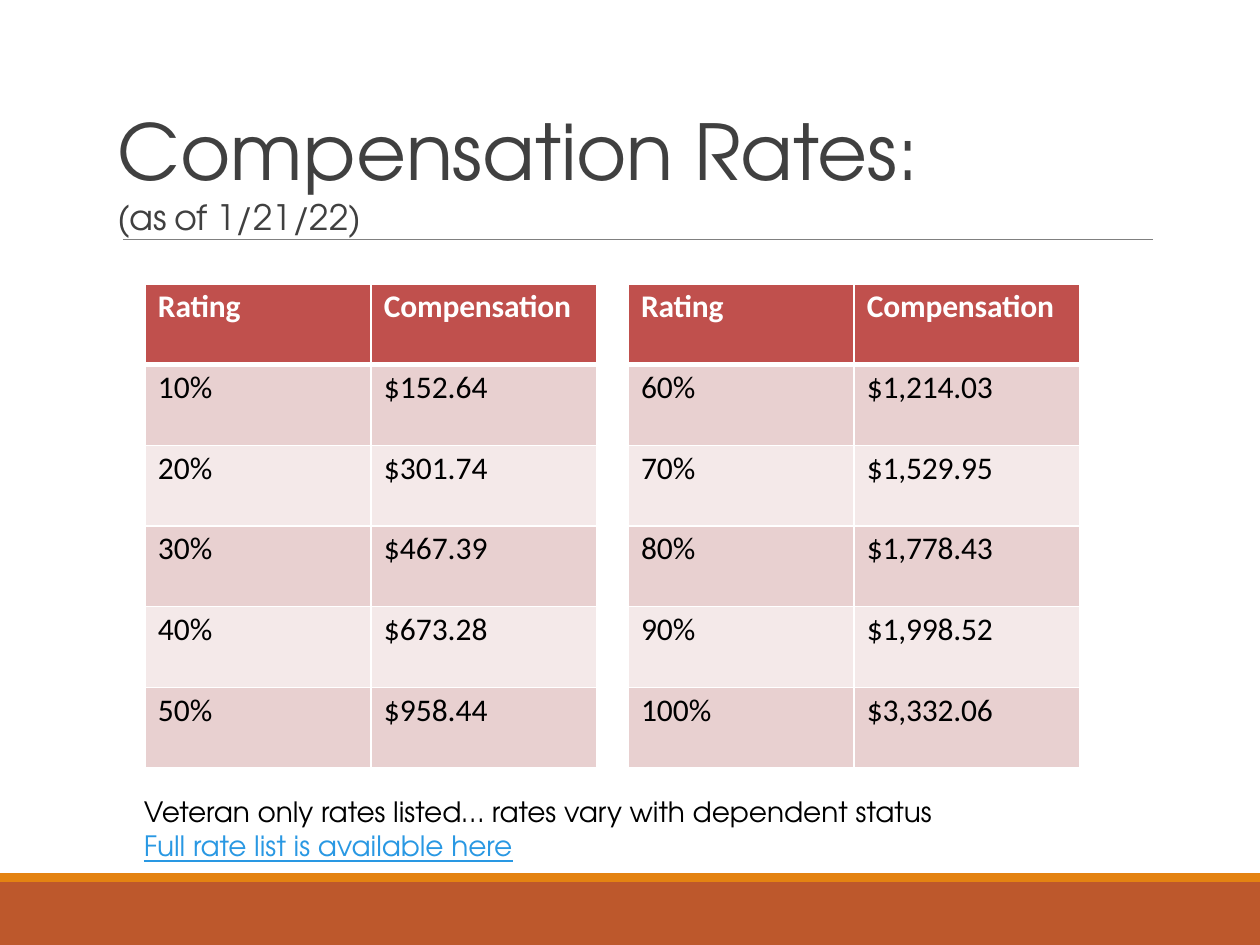
import pptx
import pptx.dml.color
import pptx.enum.shapes
import pptx.enum.text
import pptx.oxml.ns
import pptx.util
from lxml import etree

RGBColor = pptx.dml.color.RGBColor
WHITE = RGBColor(0xFF, 0xFF, 0xFF)
BLACK = RGBColor(0x00, 0x00, 0x00)
CHARCOAL = RGBColor(0x40, 0x40, 0x40)
GRAY = RGBColor(0x80, 0x80, 0x80)
RUST = RGBColor(0xBD, 0x58, 0x2C)
ORANGE = RGBColor(0xE4, 0x83, 0x12)
HEADER_RED = RGBColor(0xC0, 0x50, 0x4D)
BAND_DARK = RGBColor(0xE8, 0xD0, 0xD0)
BAND_LIGHT = RGBColor(0xF4, 0xE9, 0xE9)
LINK_BLUE = RGBColor(0x29, 0x98, 0xE3)

DISPLAY_FONT = "TeX Gyre Adventor"
TABLE_FONT = "Calibri"
PX_PER_INCH = 126

HEADINGS = ("Rating", "Compensation")
LOW_RATES = [("10%", "$152.64"), ("20%", "$301.74"), ("30%", "$467.39"),
             ("40%", "$673.28"), ("50%", "$958.44")]
HIGH_RATES = [("60%", "$1,214.03"), ("70%", "$1,529.95"), ("80%", "$1,778.43"),
              ("90%", "$1,998.52"), ("100%", "$3,332.06")]


def px(length):
    return pptx.util.Emu(round(length * 914400 / PX_PER_INCH))


class SlideBuilder:
    def __init__(self, slide):
        self.slide = slide

    def bar(self, left, top, width, height, color):
        shape = self.slide.shapes.add_shape(
            pptx.enum.shapes.MSO_SHAPE.RECTANGLE,
            px(left), px(top), px(width), px(height))
        shape.shadow.inherit = False
        shape.fill.solid()
        shape.fill.fore_color.rgb = color
        shape.line.fill.background()

    def rule(self, left, top, right, color, points):
        connector = self.slide.shapes.add_connector(
            pptx.enum.shapes.MSO_CONNECTOR.STRAIGHT,
            px(left), px(top), px(right), px(top))
        connector.line.color.rgb = color
        connector.line.width = pptx.util.Pt(points)
        properties = connector._element.spPr
        etree.SubElement(properties, pptx.oxml.ns.qn("a:effectLst"))

    def text_box(self, left, top, width, height, margins=(13, 6, 13, 6),
                 anchor=pptx.enum.text.MSO_ANCHOR.TOP):
        frame = self.slide.shapes.add_textbox(
            px(left), px(top), px(width), px(height)).text_frame
        frame.word_wrap = True
        frame.vertical_anchor = anchor
        (frame.margin_left, frame.margin_top,
         frame.margin_right, frame.margin_bottom) = map(px, margins)
        return frame

    def run(self, paragraph, text, size, color, font=DISPLAY_FONT,
            bold=False, underline=False, spacing=0):
        run = paragraph.add_run()
        run.text = text
        run.font.name = font
        run.font.size = pptx.util.Pt(size)
        run.font.color.rgb = color
        run.font.bold = bold
        run.font.underline = underline
        if spacing:
            run.font._element.set("spc", str(round(spacing * 100)))

    def borders(self, cell, top, bottom):
        properties = cell._tc.get_or_add_tcPr()
        widths = {"a:lnL": 1, "a:lnR": 1, "a:lnT": top, "a:lnB": bottom}
        for position, (tag, points) in enumerate(widths.items()):
            line = etree.Element(pptx.oxml.ns.qn(tag), w=str(pptx.util.Pt(points)))
            fill = etree.SubElement(line, pptx.oxml.ns.qn("a:solidFill"))
            etree.SubElement(fill, pptx.oxml.ns.qn("a:srgbClr"), val=str(WHITE))
            properties.insert(position, line)

    def rate_table(self, left, top, width, height, rates):
        rows = [HEADINGS] + rates
        table = self.slide.shapes.add_table(
            len(rows), len(HEADINGS), px(left), px(top), px(width), px(height)).table
        for row, values in enumerate(rows):
            header = row == 0
            band = BAND_DARK if row % 2 else BAND_LIGHT
            for column, value in enumerate(values):
                cell = table.cell(row, column)
                cell.margin_left, cell.margin_top = px(13), px(4)
                cell.margin_right = cell.margin_bottom = 0
                cell.fill.solid()
                cell.fill.fore_color.rgb = HEADER_RED if header else band
                self.borders(cell, 3 if row == 1 else 1, 3 if header else 1)
                paragraph = cell.text_frame.paragraphs[0]
                paragraph.space_before = pptx.util.Pt(2.4)
                tight = header or value.startswith("$") and "," in value
                self.run(paragraph, value, 18, WHITE if header else BLACK,
                         TABLE_FONT, bold=header, spacing=-0.1 if tight else 0)


def main():
    presentation = pptx.Presentation()
    presentation.slide_width, presentation.slide_height = px(1260), px(945)
    slide = presentation.slides.add_slide(presentation.slide_layouts[6])
    builder = SlideBuilder(slide)

    # Footer bands and title rule
    builder.bar(0, 882, 1260, 63, RUST)
    builder.bar(0, 873, 1260, 9, ORANGE)
    builder.rule(123, 239, 1153, GRAY, 0.5)

    # Title
    frame = builder.text_box(116, 101, 852, 137, (2, 1, 0, 0),
                             pptx.enum.text.MSO_ANCHOR.BOTTOM)
    paragraph = frame.paragraphs[0]
    paragraph.space_before = pptx.util.Pt(1.1)
    builder.run(paragraph, "Compensation Rates: ", 44, CHARCOAL, spacing=-0.1)
    paragraph.add_line_break()
    builder.run(paragraph, "(as of ", 20, CHARCOAL, spacing=-0.5)
    builder.run(paragraph, "1/21/22)", 20, CHARCOAL, spacing=-0.1)

    # Rate tables
    for left, rates in ((145, LOW_RATES), (628, HIGH_RATES)):
        builder.rate_table(left, 284, 452, 484, rates)

    # Notes below the tables
    frame = builder.text_box(131, 789, 932, 81)
    builder.run(frame.paragraphs[0],
                "Veteran only rates listed… rates vary with dependent status",
                16, BLACK)
    builder.run(frame.add_paragraph(), "Full rate list is available here",
                16, LINK_BLUE, underline=True)

    presentation.save("out.pptx")


if __name__ == "__main__":
    main()
